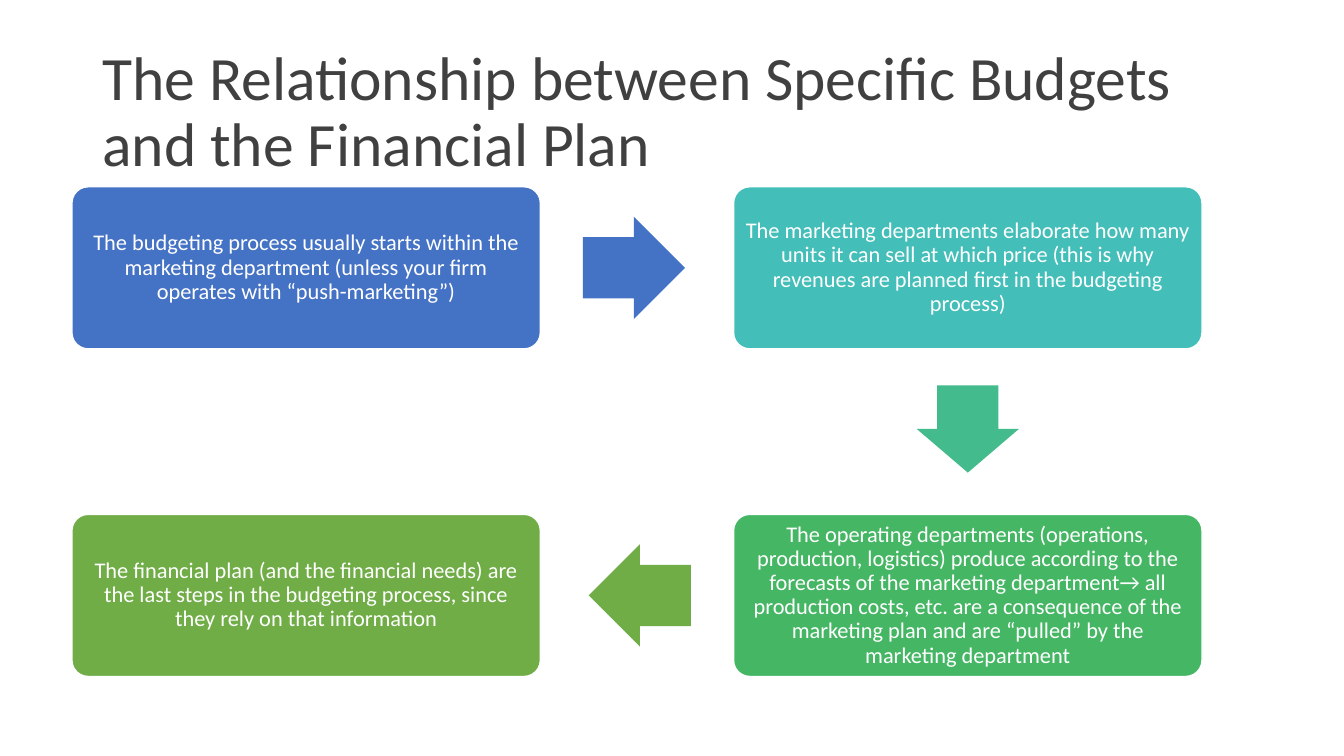
from pptx import Presentation
from pptx.dml.color import RGBColor
from pptx.enum.shapes import MSO_SHAPE
from pptx.enum.text import MSO_ANCHOR, PP_ALIGN
from pptx.util import Pt

ROUNDED, ARROW = MSO_SHAPE.ROUNDED_RECTANGLE, MSO_SHAPE.RIGHT_ARROW
MIDDLE = MSO_ANCHOR.MIDDLE
LEFT, CENTER = PP_ALIGN.LEFT, PP_ALIGN.CENTER

COLORS = {
    "title": "404041",
    "white": "FFFFFF",
    "start": "4472C4",
    "marketing": "43BEB9",
    "down": "43BB8D",
    "operations": "45B664",
    "finance": "70AD47",
}


class ProcessSlide:
    font = "Calibri"
    line_spacing = 0.9

    def __init__(self, deck):
        self.slide = deck.slides.add_slide(deck.slide_layouts[6])

    def color(self, name):
        return RGBColor.from_string(COLORS[name])

    def set_text(self, frame, text, size, color, align, margins):
        frame_format = {"word_wrap": True, "vertical_anchor": MIDDLE, **margins}
        for key, value in frame_format.items():
            setattr(frame, key, value)
        paragraph = frame.paragraphs[0]
        paragraph.alignment = align
        paragraph.line_spacing = self.line_spacing
        run = paragraph.add_run()
        run.text = text
        for key, value in {"name": self.font, "size": Pt(size)}.items():
            setattr(run.font, key, value)
        run.font.color.rgb = self.color(color)

    def title(self, text, left, top, width, height):
        heading = self.slide.shapes.add_textbox(Pt(left), Pt(top), Pt(width), Pt(height))
        self.set_text(heading.text_frame, text, 44, "title", LEFT, {})

    def block(self, kind, left, top, width, height, fill, adjustments):
        shape = self.slide.shapes.add_shape(kind, Pt(left), Pt(top), Pt(width), Pt(height))
        shape.shadow.inherit = False
        shape.fill.solid()
        shape.fill.fore_color.rgb = self.color(fill)
        for index, value in enumerate(adjustments):
            shape.adjustments[index] = value
        return shape

    def step(self, text, left, top, width, height, fill):
        card = self.block(ROUNDED, left, top, width, height, fill, [0.1])
        card.line.color.rgb = self.color("white")
        card.line.width = Pt(1)
        sides = ("left", "top", "right", "bottom")
        margins = {f"margin_{side}": Pt(5) for side in sides}
        self.set_text(card.text_frame, text, 16, "white", CENTER, margins)

    def arrow(self, center_x, center_y, length, breadth, rotation, fill):
        arrow = self.block(ARROW, center_x - length / 2, center_y - breadth / 2,
                           length, breadth, fill, [0.6, 0.5])
        arrow.line.fill.background()
        arrow.rotation = rotation


def main():
    deck = Presentation()
    deck.slide_width, deck.slide_height = Pt(960), Pt(540)
    page = ProcessSlide(deck)

    page.title("The Relationship between Specific Budgets and the Financial Plan",
               66, 28.75, 828, 104.4)

    # Grid of the four steps
    columns, rows = (51.4, 524), (133.4, 367.4)
    card_width, card_height = 334.6, 115.8
    upper, lower = (row + card_height / 2 for row in rows)
    right_center = columns[1] + card_width / 2

    # Steps in clockwise order: column, row, fill, text
    steps = [
        (0, 0, "start", "The budgeting process usually starts within the marketing "
         "department (unless your firm operates with “push-marketing”)"),
        (1, 0, "marketing", "The marketing departments elaborate how many units it can sell "
         "at which price (this is why revenues are planned first in the budgeting process)"),
        (1, 1, "operations", "The operating departments (operations, production, logistics) "
         "produce according to the forecasts of the marketing department→ all production "
         "costs, etc. are a consequence of the marketing plan and are “pulled” by the "
         "marketing department"),
        (0, 1, "finance", "The financial plan (and the financial needs) are the last steps "
         "in the budgeting process, since they rely on that information"),
    ]
    for column, row, fill, text in steps:
        page.step(text, columns[column], rows[row], card_width, card_height, fill)

    # Arrows between the steps
    page.arrow(452.8, upper, 73, 73, 0, "start")
    page.arrow(right_center, 306.4, 62.4, 73, 90, "down")
    page.arrow(457, lower, 73, 73, 180, "finance")

    deck.save("out.pptx")


if __name__ == "__main__":
    main()
